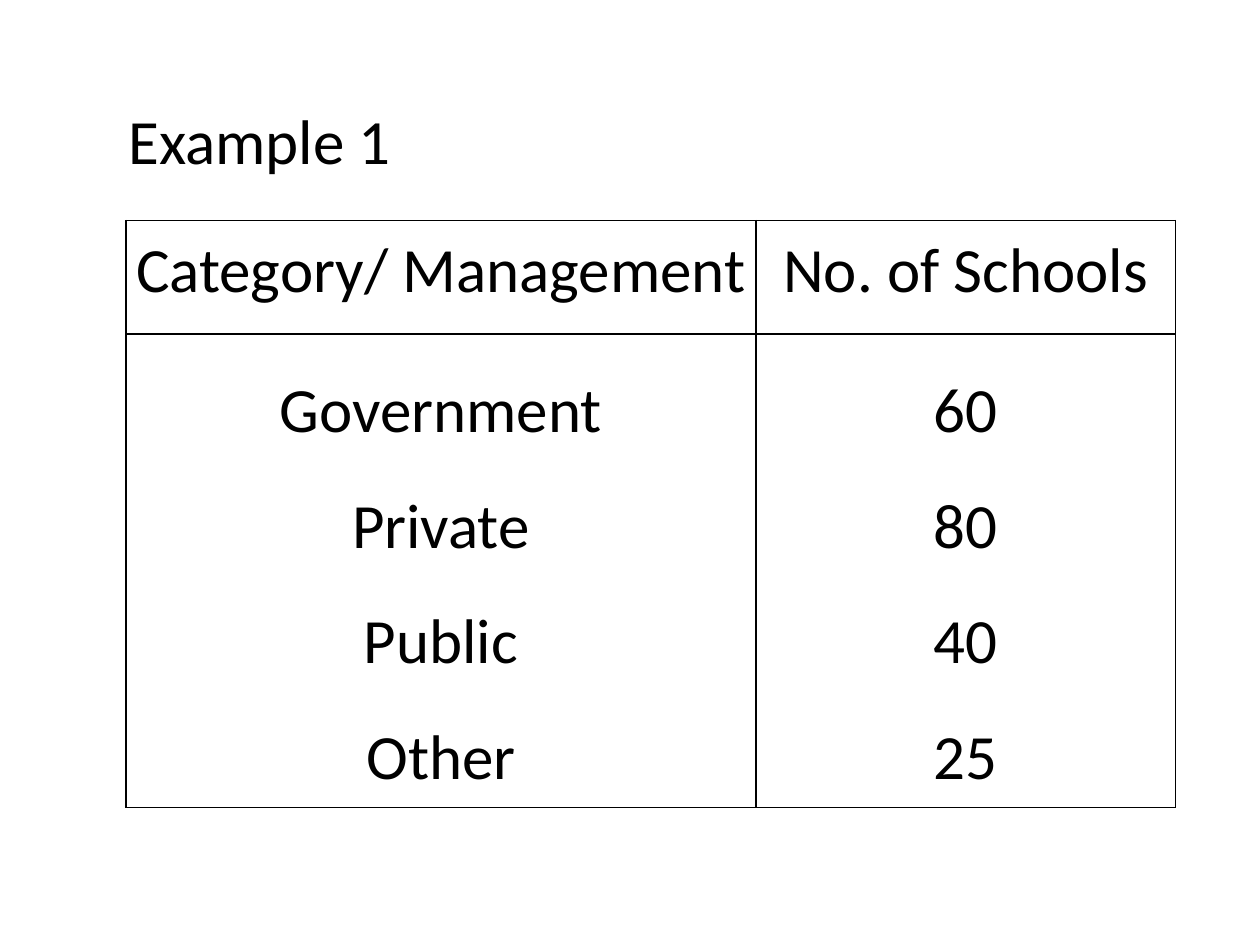
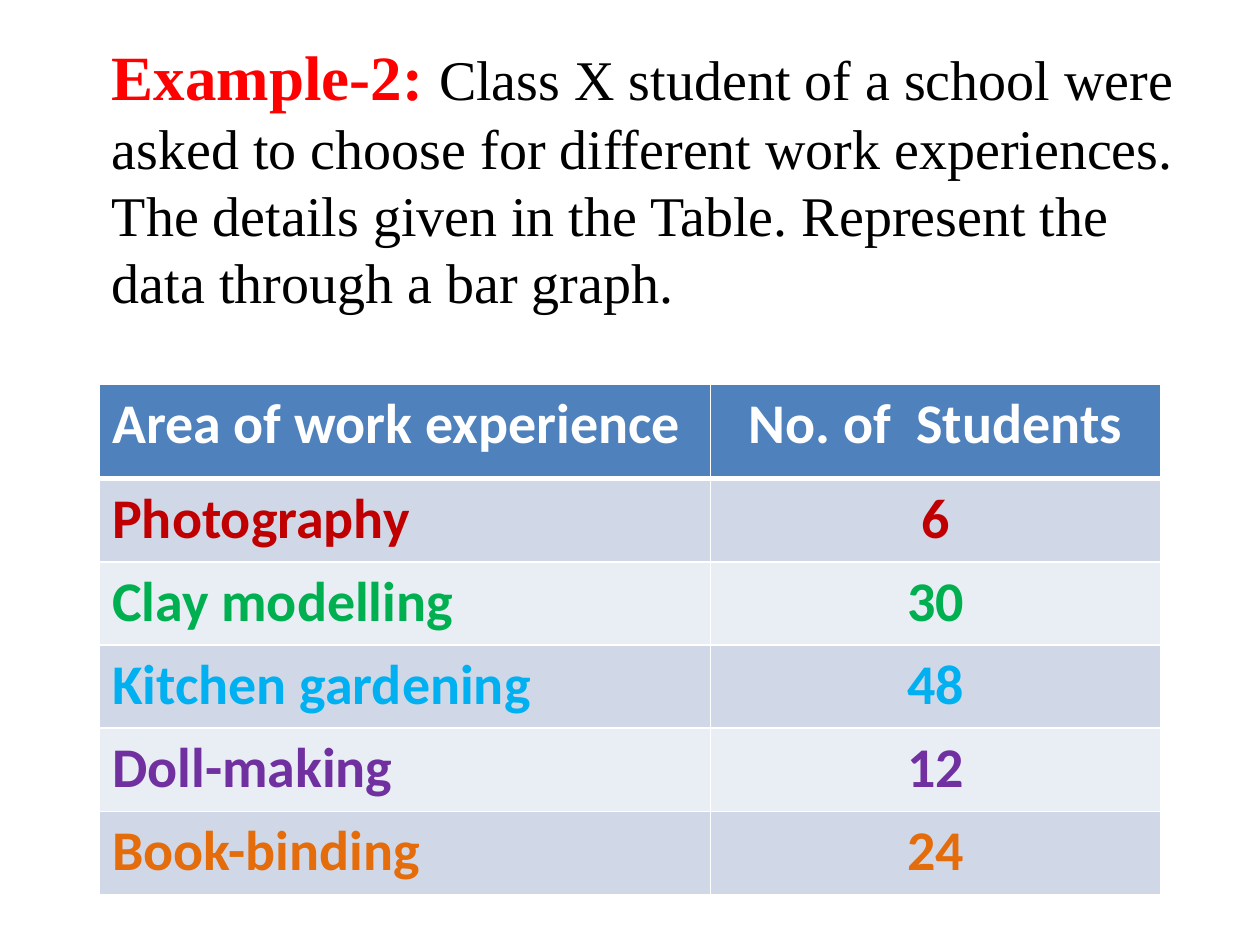
from lxml import etree
from pptx import Presentation
from pptx.dml.color import RGBColor
from pptx.enum import text
from pptx.oxml.ns import qn
from pptx.util import Inches, Pt

# Content
SCHOOLS_TITLE = "Example 1"
SCHOOLS = [
    ("Category/ Management", "No. of Schools"),
    ("Government\nPrivate\nPublic\nOther", "60\n80\n40\n25"),
]
WORK_TITLE = "Example-2: "
WORK_TASK = ("Class X student of a school were asked to choose for different work "
             "experiences. The details given in the Table. Represent the data "
             "through a bar graph.")
WORK = [
    ("Area of work experience", "No. of  Students", "white"),
    ("Photography", "6", "dark_red"),
    ("Clay modelling", "30", "green"),
    ("Kitchen gardening", "48", "sky"),
    ("Doll-making", "12", "purple"),
    ("Book-binding", "24", "orange"),
]

# Shared style
COLORS = {
    "black": "000000", "white": "FFFFFF", "red": "FF0000", "dark_red": "C00000",
    "green": "00B050", "sky": "00B0F0", "purple": "7030A0", "orange": "E46C0A",
    "header": "4F81BD", "band_dark": "D0D8E8", "band_light": "E9EDF4",
}
SANS, SERIF = "Calibri", "Times New Roman"
LEFT, CENTER = text.PP_ALIGN.LEFT, text.PP_ALIGN.CENTER


def style_run(r, size, color="black", font=SANS, bold=False):
    r.font.size, r.font.name, r.font.bold = Pt(size), font, bold
    r.font.color.rgb = RGBColor.from_string(COLORS[color])


def add_text(s, box, runs, anchor=text.MSO_ANCHOR.TOP):
    """Add a one-paragraph text box; runs are (words, style) pairs."""
    tf = s.shapes.add_textbox(*map(Inches, box)).text_frame
    tf.word_wrap = True
    tf.vertical_anchor = anchor
    for words, style in runs:
        r = tf.paragraphs[0].add_run()
        r.text = words
        style_run(r, **style)


def add_grid(s, left, top, widths, heights):
    """Add a table with the given column widths and row heights."""
    frame = s.shapes.add_table(len(heights), len(widths), Inches(left), Inches(top),
                               Inches(sum(widths)), Inches(sum(heights)))
    table = frame.table
    for col, width in zip(table.columns, widths):
        col.width = Inches(width)
    for row, height in zip(table.rows, heights):
        row.height = Inches(height)
    return table


def set_borders(cell, color, top=1, bottom=1):
    tcPr = cell._tc.get_or_add_tcPr()
    for side, width in (("L", 1), ("R", 1), ("T", top), ("B", bottom)):
        ln = etree.SubElement(tcPr, qn(f"a:ln{side}"), w=str(Pt(width)))
        fill = etree.SubElement(ln, qn("a:solidFill"))
        etree.SubElement(fill, qn("a:srgbClr"), val=COLORS[color])


def fill_cell(cell, words, align, spacing=None, **style):
    cell.text_frame.text = words
    for p in cell.text_frame.paragraphs:
        p.alignment = align
        p.line_spacing = spacing
        for r in p.runs:
            style_run(r, **style)


def build_schools(s):
    table = add_grid(s, 1, 1.75, (5, 3.33), (0.9, 3.76))
    for i, row in enumerate(SCHOOLS):
        for j, words in enumerate(row):
            cell = table.cell(i, j)
            cell.margin_left = cell.margin_right = Inches(0.07)
            cell.margin_top = cell.margin_bottom = 0
            set_borders(cell, "black")
            cell.fill.background()
            fill_cell(cell, words, CENTER, 1.5 if i else 1.15, size=36)
    add_text(s, (0.92, 0.75, 9.08, 0.71), [(SCHOOLS_TITLE, {"size": 36})],
             text.MSO_ANCHOR.MIDDLE)


def build_work(s):
    heights = [0.75] + [0.66] * (len(WORK) - 1)
    table = add_grid(s, 0.79, 3.05, (4.85, 3.57), heights)
    for i, (area, students, color) in enumerate(WORK):
        band = "header" if i == 0 else "band_dark" if i % 2 else "band_light"
        for j, (words, align) in enumerate(((area, LEFT), (students, CENTER))):
            cell = table.cell(i, j)
            # Thick rule between the header and the first row
            set_borders(cell, "white", top=3 if i == 1 else 1, bottom=3 if i == 0 else 1)
            cell.fill.solid()
            cell.fill.fore_color.rgb = RGBColor.from_string(COLORS[band])
            fill_cell(cell, words, align, size=32, color=color, bold=True)
    add_text(s, (0.79, 0.25, 8.71, 2.32), [
        (WORK_TITLE, {"size": 36, "color": "red", "font": SERIF, "bold": True}),
        (WORK_TASK, {"size": 32, "font": SERIF}),
    ])


def main():
    prs = Presentation()
    prs.slide_width, prs.slide_height = Inches(10), Inches(7.5)
    for build in (build_schools, build_work):
        build(prs.slides.add_slide(prs.slide_layouts[6]))
    prs.save("out.pptx")


if __name__ == "__main__":
    main()
